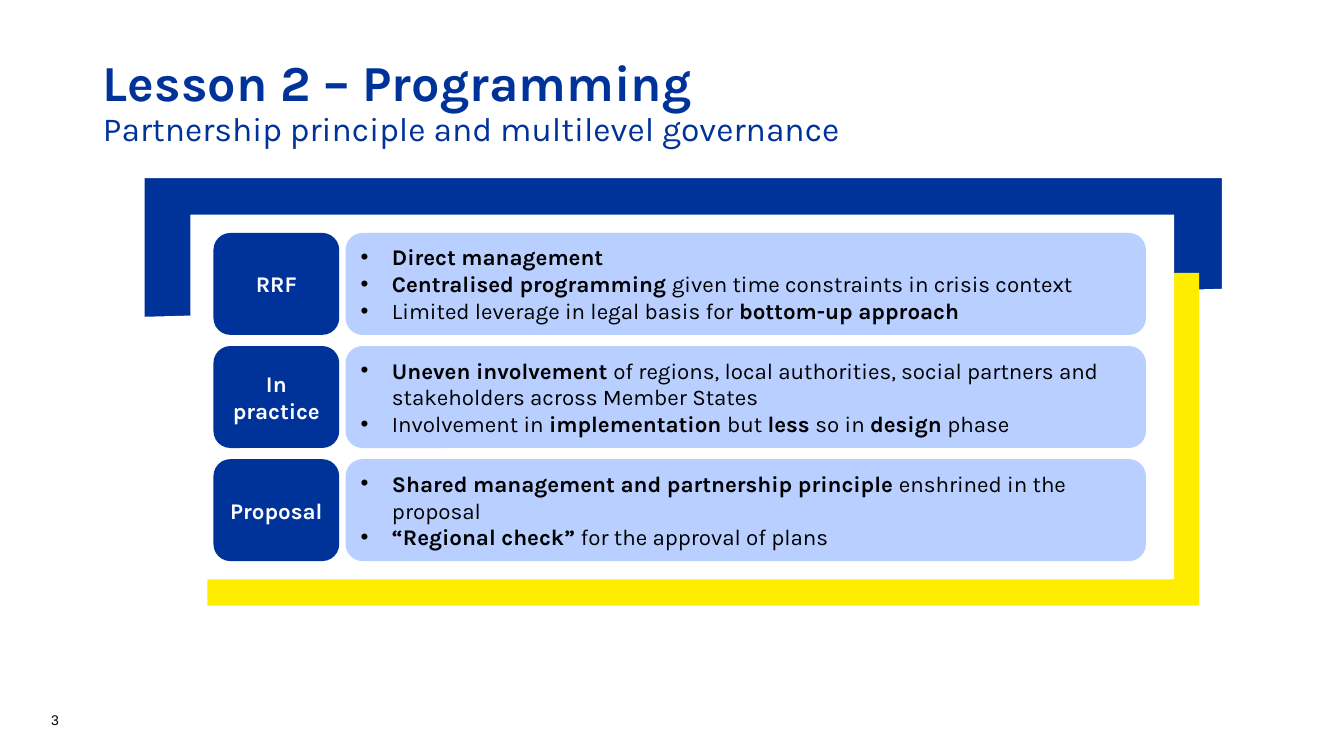
import dataclasses
import lxml.etree
import pptx
import pptx.dml.color
import pptx.enum.shapes
import pptx.enum.text
import pptx.oxml.ns
import pptx.util

Cm = pptx.util.Cm
Kind = pptx.enum.shapes.MSO_SHAPE
Align = pptx.enum.text.PP_ALIGN
Anchor = pptx.enum.text.MSO_ANCHOR
qn = pptx.oxml.ns.qn


@dataclasses.dataclass(frozen=True)
class Theme:
    font: str = "Karla"
    plain: str = "Arial"
    blue: str = "003399"
    pale: str = "B8CFFF"
    yellow: str = "FFED00"
    white: str = "FFFFFF"
    black: str = "000000"
    head: int = 36
    sub: int = 24
    text: int = 16
    small: int = 10


@dataclasses.dataclass(frozen=True)
class Box:
    left: float
    top: float
    width: float
    height: float


@dataclasses.dataclass(frozen=True)
class Part:
    text: str
    bold: bool = False


@dataclasses.dataclass(frozen=True)
class Row:
    label: str
    points: list[list[Part]]


@dataclasses.dataclass(frozen=True)
class Panel:
    kind: int
    box: Box
    fill: str
    turn: int = 0


THEME = Theme()
TOP, PITCH, HEIGHT = 5.87, 2.85, 2.57
PANELS = [
    Panel(Kind.FLOWCHART_MANUAL_INPUT, Box(3.63, 4.47, 27.18, 3.53), THEME.blue, 180),
    Panel(Kind.RECTANGLE, Box(5.23, 6.88, 24.99, 8.38), THEME.yellow),
    Panel(Kind.RECTANGLE, Box(4.8, 5.41, 24.79, 9.19), THEME.white),
]
ROWS = [
    Row("RRF", [
        [Part("Direct management", True)],
        [Part("Centralised programming ", True),
         Part("given time constraints in crisis context")],
        [Part("Limited leverage in legal basis for "),
         Part("bottom-up approach", True)],
    ]),
    Row("In practice", [
        [Part("Uneven involvement ", True),
         Part("of regions, local authorities, social partners and "
              "stakeholders across Member States")],
        [Part("Involvement in "), Part("implementation ", True), Part("but "),
         Part("less ", True), Part("so in "), Part("design ", True), Part("phase")],
    ]),
    Row("Proposal", [
        [Part("Shared management and partnership principle ", True),
         Part("enshrined in the proposal")],
        [Part("“Regional check” ", True), Part("for the approval of plans")],
    ]),
]


def tint(code: str):
    return pptx.dml.color.RGBColor.from_string(code)


def paint(shape, code: str) -> None:
    shape.fill.solid()
    shape.fill.fore_color.rgb = tint(code)


def style(font, size: int, code: str, bold: bool = False, name: str = THEME.font) -> None:
    font.name = name
    font.size = pptx.util.Pt(size)
    font.bold = bold
    font.color.rgb = tint(code)


def place(shape, box: Box) -> None:
    shape.left, shape.top = Cm(box.left), Cm(box.top)
    shape.width, shape.height = Cm(box.width), Cm(box.height)


def set_frame(frame, anchor) -> None:
    frame.word_wrap = True
    frame.auto_size = pptx.enum.text.MSO_AUTO_SIZE.NONE
    frame.vertical_anchor = anchor


def add_shape(shapes, kind: int, box: Box, code: str):
    shape = shapes.add_shape(kind, Cm(box.left), Cm(box.top), Cm(box.width), Cm(box.height))
    shape.shadow.inherit = False
    paint(shape, code)
    shape.line.fill.background()
    return shape


def add_panels(shapes) -> None:
    group = shapes.add_group_shape()
    for panel in PANELS:
        shape = add_shape(group.shapes, panel.kind, panel.box, panel.fill)
        shape.rotation = panel.turn
        if panel.turn:
            shape.line.color.rgb = tint(THEME.white)
            shape.line.width = pptx.util.Pt(1)


def add_label(shapes, text: str, box: Box) -> None:
    shape = add_shape(shapes, Kind.ROUNDED_RECTANGLE, box, THEME.blue)
    set_frame(shape.text_frame, Anchor.MIDDLE)
    shape.text_frame.text = text
    para = shape.text_frame.paragraphs[0]
    para.alignment = Align.CENTER
    style(para.runs[0].font, THEME.text, THEME.white, True)


def add_bullet(para) -> None:
    props = para._p.get_or_add_pPr()
    props.set("marL", str(Cm(0.79)))
    props.set("indent", str(-Cm(0.79)))
    color = lxml.etree.SubElement(props, qn("a:buClr"))
    lxml.etree.SubElement(color, qn("a:srgbClr")).set("val", THEME.black)
    lxml.etree.SubElement(props, qn("a:buFont")).set("typeface", THEME.plain)
    lxml.etree.SubElement(props, qn("a:buChar")).set("char", "•")


def fill_list(shape, points: list[list[Part]], box: Box) -> None:
    place(shape, box)
    form = lxml.etree.SubElement(shape.element.spPr, qn("a:prstGeom"))
    form.set("prst", "roundRect")
    lxml.etree.SubElement(form, qn("a:avLst"))
    paint(shape, THEME.pale)
    shape.line.fill.background()
    frame = shape.text_frame
    set_frame(frame, Anchor.MIDDLE)
    for rank, point in enumerate(points):
        para = frame.add_paragraph() if rank else frame.paragraphs[0]
        add_bullet(para)
        para.alignment = Align.LEFT
        para.space_before = pptx.util.Pt(0)
        for part in point:
            run = para.add_run()
            run.text = part.text
            style(run.font, THEME.text, THEME.black, part.bold)
    shape.element.getparent().append(shape.element)


def fill_title(shape) -> None:
    place(shape, Box(2.34, 1.47, 30.23, 2.26))
    paint(shape, THEME.white)
    frame = shape.text_frame
    set_frame(frame, Anchor.MIDDLE)
    frame.text = "Lesson 2 – Programming\nPartnership principle and multilevel governance"
    for para, size in zip(frame.paragraphs, (THEME.head, THEME.sub)):
        para.alignment = Align.LEFT
        para.line_spacing = 0.9
        para.space_before = pptx.util.Pt(0)
        style(para.runs[0].font, size, THEME.blue, size == THEME.head)


def add_page(shapes, text: str) -> None:
    frame = shapes.add_textbox(Cm(1.04), Cm(17.45), Cm(7.62), Cm(1.02)).text_frame
    set_frame(frame, Anchor.BOTTOM)
    frame.text = text
    style(frame.paragraphs[0].runs[0].font, THEME.small, THEME.black, name=THEME.plain)


def main() -> None:
    deck = pptx.Presentation()
    deck.slide_width, deck.slide_height = Cm(33.87), Cm(19.05)
    slide = deck.slides.add_slide(deck.slide_layouts[4])
    shapes = slide.shapes
    fill_title(shapes.title)
    add_page(shapes, "3")
    add_panels(shapes)
    title, *lists, spare = slide.placeholders
    spare.element.getparent().remove(spare.element)
    for rank, (row, shape) in enumerate(zip(ROWS, lists)):
        top = TOP + rank * PITCH
        fill_list(shape, row.points, Box(8.71, top, 20.17, HEIGHT))
        add_label(shapes, row.label, Box(5.38, top, 3.17, HEIGHT))
    deck.save("out.pptx")


if __name__ == "__main__":
    main()
